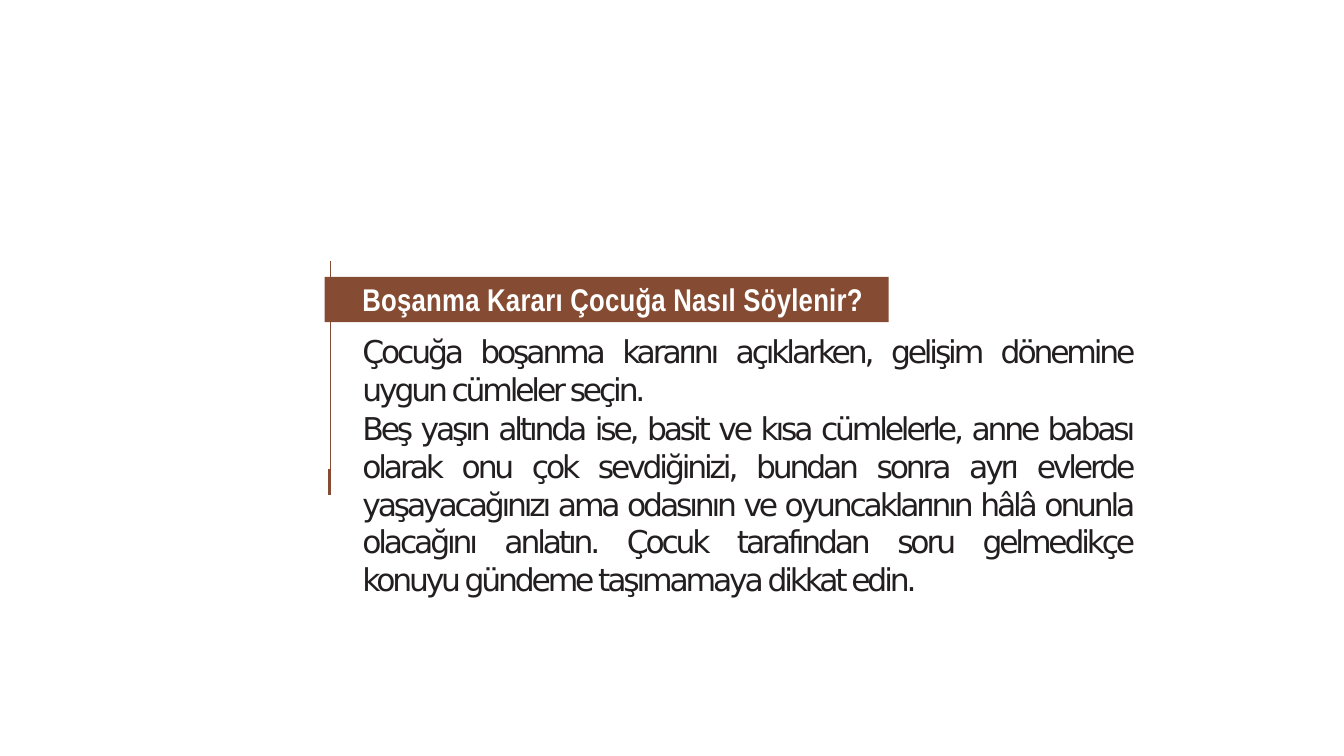
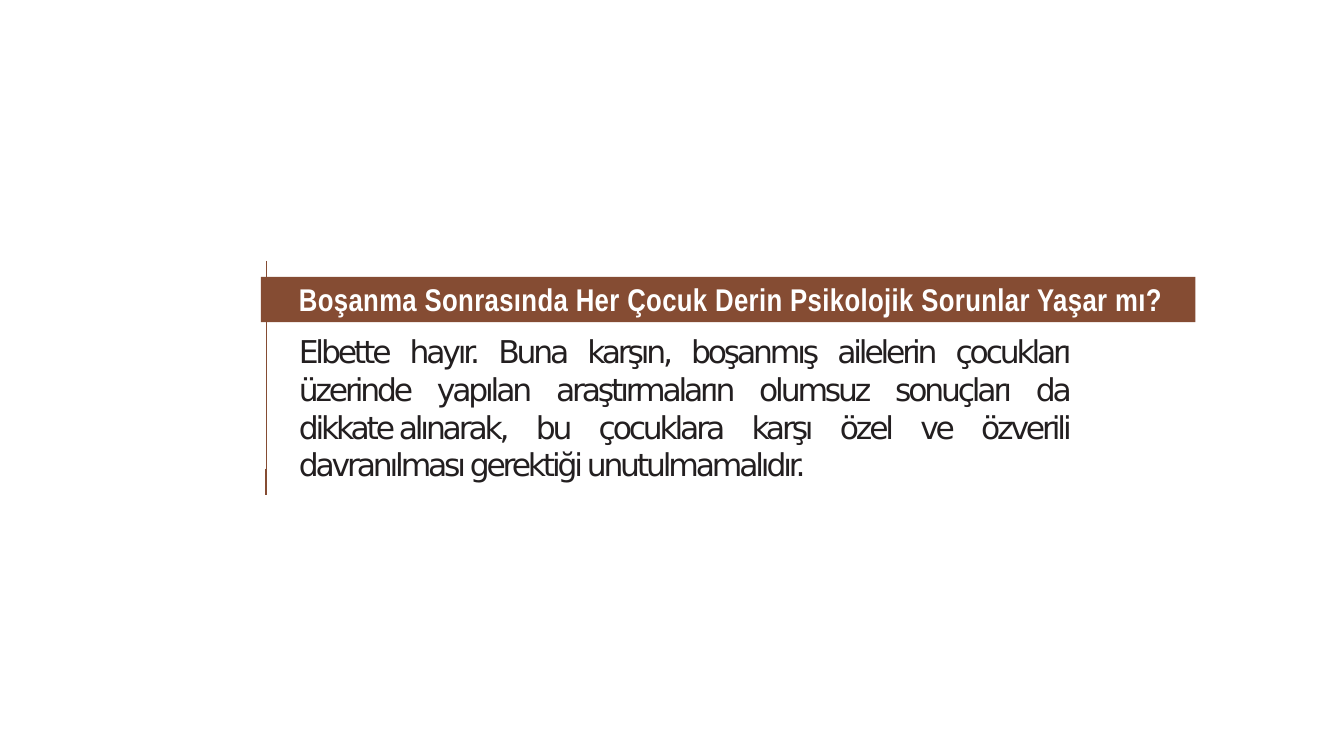
from dataclasses import dataclass, replace

from pptx import Presentation
from pptx.dml.color import RGBColor
from pptx.enum.shapes import MSO_CONNECTOR as Connector
from pptx.enum.text import MSO_ANCHOR as Anchor, MSO_AUTO_SIZE as AutoSize, PP_ALIGN as Align
from pptx.oxml.ns import qn
from pptx.oxml.xmlchemy import OxmlElement
from pptx.util import Inches, Length, Pt

BROWN, WHITE, INK = "854C33", "FFFFFF", "231F20"
NO_BREAK = chr(160)
BAR_TOP, BAR_HEIGHT = 4.53, 0.74
BODY_TOP, BODY_WIDTH, BODY_INDENT = 5.43, 12.61, 0.61
TITLE_FORMAT = {"name": "Arial Narrow", "size": Pt(37), "bold": True}
BODY_FORMAT = {"name": "DejaVu Sans", "size": Pt(37), "bold": False}


@dataclass(frozen=True)
class TextStyle:
    """Look of the text in one placeholder."""
    font: dict
    color: str
    tracking: float
    align: Align
    left_inset: float
    top_inset: float


@dataclass(frozen=True)
class Rule:
    """Vertical line, placed relative to the left edge of the bar."""
    offset: float
    top: float
    bottom: float
    weight: float


@dataclass(frozen=True)
class BodyText:
    """One paragraph with its spacing."""
    text: str
    line_spacing: float | Length = 1.0
    space_before: float = 0


@dataclass(frozen=True)
class Topic:
    """Content and placement of one slide."""
    left: float
    bar_width: float
    body_height: float
    title: str
    title_tracking: float
    body: tuple[BodyText, ...]


TITLE_STYLE = TextStyle(TITLE_FORMAT, WHITE, 0.3, Align.LEFT, 0.62, 0.06)
BODY_STYLE = TextStyle(BODY_FORMAT, INK, -3.7, Align.JUSTIFY, 0.01, 0.01)
RULES = (
    Rule(0.09, 4.27, BAR_TOP, 0.87),
    Rule(0.09, 5.27, 8.1, 0.87),
    Rule(0.07, 7.67, 8.1, 1.65),
)
TOPICS = (
    Topic(5.31, 9.23, 4.36, "Boşanma Kararı Çocuğa Nasıl Söylenir?", 0.3, (
        BodyText("Çocuğa boşanma kararını açıklarken, gelişim dönemine uygun "
                 "cümleler seçin."),
        BodyText("Beş yaşın altında ise, basit ve kısa cümlelerle, anne babası "
                 "olarak onu çok sevdiğinizi, bundan sonra ayrı evlerde "
                 "yaşayacağınızı ama odasının ve oyuncaklarının hâlâ onunla "
                 "olacağını anlatın. Çocuk tarafından soru gelmedikçe "
                 f"konuyu{NO_BREAK}gündeme taşımamaya dikkat edin.", Pt(44.5), 1.6),
    )),
    Topic(4.27, 15.29, 2.5,
          "Boşanma Sonrasında Her Çocuk Derin Psikolojik Sorunlar Yaşar mı?", 0.45, (
        BodyText("Elbette hayır. Buna karşın, boşanmış ailelerin çocukları "
                 "üzerinde yapılan araştırmaların olumsuz sonuçları da "
                 f"dikkate{NO_BREAK}alınarak, bu çocuklara karşı özel ve özverili "
                 "davranılması gerektiği unutulmamalıdır."),
    )),
)


def color(target, value: str) -> None:
    """Set a colour format from a hex string."""
    target.rgb = RGBColor.from_string(value)


def apply(target, values: dict) -> None:
    """Set every attribute in a dict of format values."""
    for name, value in values.items():
        setattr(target, name, value)


def place(shape, left: float, top: float, width: float, height: float) -> None:
    """Move and size a shape, in inches."""
    apply(shape, {"left": Inches(left), "top": Inches(top),
                  "width": Inches(width), "height": Inches(height)})


def write(shape, texts: tuple[BodyText, ...], style: TextStyle) -> None:
    """Fill a placeholder with formatted paragraphs."""
    frame = shape.text_frame
    apply(frame, {"word_wrap": True, "auto_size": AutoSize.NONE,
                  "vertical_anchor": Anchor.TOP,
                  "margin_left": Inches(style.left_inset),
                  "margin_top": Inches(style.top_inset),
                  "margin_right": 0, "margin_bottom": 0})
    for index, item in enumerate(texts):
        paragraph = frame.add_paragraph() if index else frame.paragraphs[0]
        properties = paragraph._p.get_or_add_pPr()
        properties.set("marL", "0")
        properties.set("indent", "0")
        properties.append(OxmlElement("a:buNone"))
        apply(paragraph, {"alignment": style.align, "line_spacing": item.line_spacing,
                          "space_before": Pt(item.space_before), "space_after": Pt(0)})
        run = paragraph.add_run()
        run.text = item.text
        apply(run.font, style.font)
        color(run.font.color, style.color)
        run._r.get_or_add_rPr().set("spc", str(round(style.tracking * 100)))


def add_rule(slide, left: float, rule: Rule) -> None:
    """Draw one vertical line beside the text."""
    x = Inches(left + rule.offset)
    line = slide.shapes.add_connector(
        Connector.STRAIGHT, x, Inches(rule.top), x, Inches(rule.bottom))
    color(line.line.color, BROWN)
    line.line.width = Pt(rule.weight)
    line._element.find(qn("p:spPr")).append(OxmlElement("a:effectLst"))


def add_topic(presentation, topic: Topic) -> None:
    """Build one slide with its title bar, body text and rules."""
    slide = presentation.slides.add_slide(presentation.slide_layouts[1])
    title, body = slide.shapes.title, slide.placeholders[1]
    place(title, topic.left, BAR_TOP, topic.bar_width, BAR_HEIGHT)
    title.fill.solid()
    color(title.fill.fore_color, BROWN)
    write(title, (BodyText(topic.title),),
          replace(TITLE_STYLE, tracking=topic.title_tracking))
    place(body, topic.left + BODY_INDENT, BODY_TOP, BODY_WIDTH, topic.body_height)
    write(body, topic.body, BODY_STYLE)
    for rule in RULES:
        add_rule(slide, topic.left, rule)


def main() -> None:
    """Create and save the presentation."""
    presentation = Presentation()
    apply(presentation, {"slide_width": Inches(21.99), "slide_height": Inches(12.37)})
    for topic in TOPICS:
        add_topic(presentation, topic)
    presentation.save("out.pptx")


if __name__ == "__main__":
    main()
